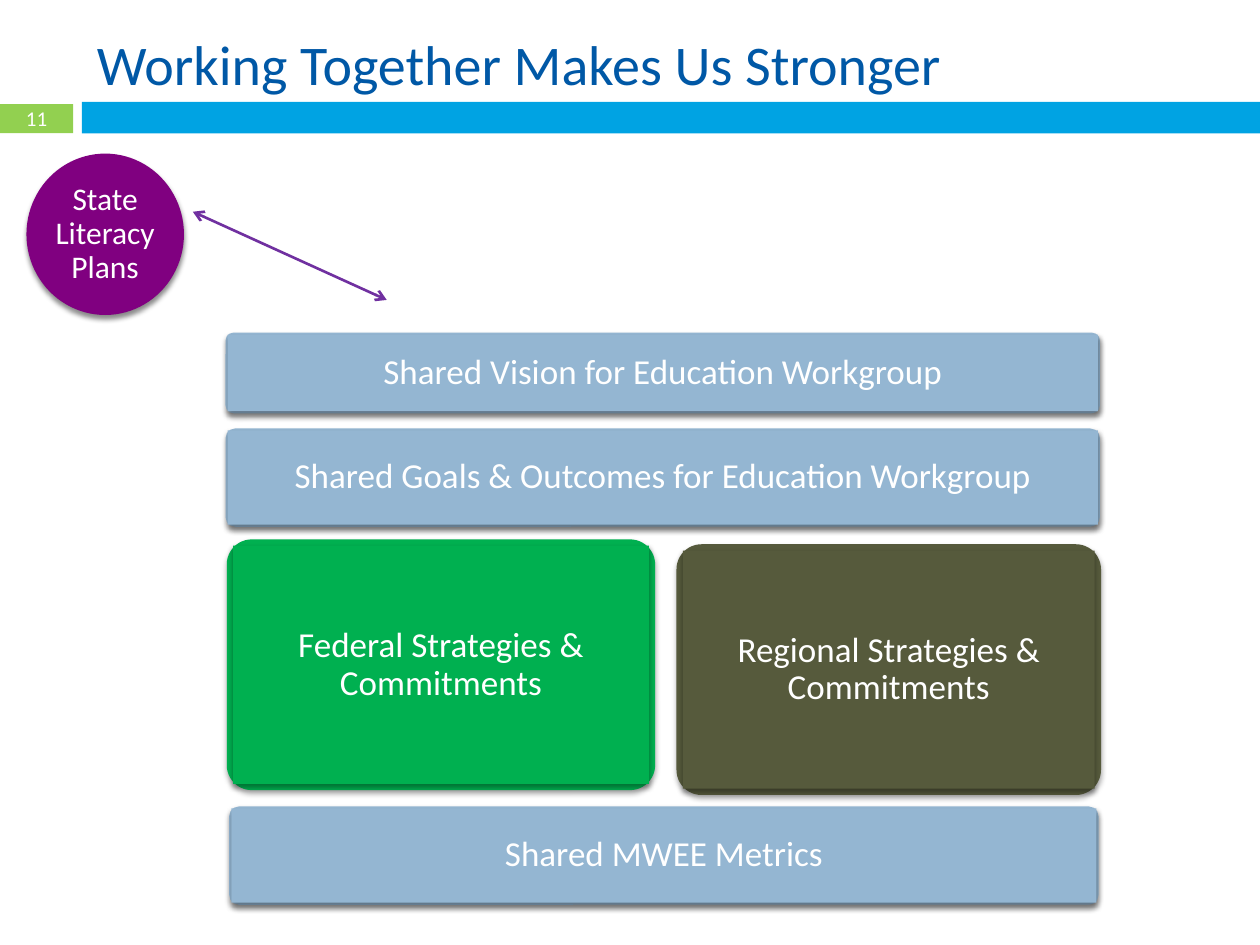
from lxml.etree import SubElement
from pptx import Presentation
from pptx.dml.color import RGBColor
from pptx.enum.shapes import MSO_CONNECTOR as Line, MSO_SHAPE as Shape
from pptx.enum.text import MSO_ANCHOR as Anchor, MSO_AUTO_SIZE as Fit, PP_ALIGN as Align
from pptx.oxml import parse_xml
from pptx.oxml.ns import nsdecls, qn
from pptx.util import Pt

WHITE = RGBColor(0xFF, 0xFF, 0xFF)
NAVY = RGBColor(0x00, 0x58, 0xA6)
SKY = RGBColor(0x00, 0xA3, 0xE3)
LIME = RGBColor(0x92, 0xD0, 0x50)
STEEL = RGBColor(0x94, 0xB6, 0xD2)
GREEN = RGBColor(0x00, 0xB0, 0x50)
OLIVE = RGBColor(0x56, 0x5A, 0x3C)
PURPLE = RGBColor(0x80, 0x00, 0x80)
VIOLET = RGBColor(0x70, 0x30, 0xA0)

TITLE = "Working Together Makes Us Stronger"
PAGE_NUMBER = "11"
PLANS = "State Literacy Plans"
CARDS = [
    ("Shared Vision for Education Workgroup", STEEL, (128.9, 190.1, 499.7, 46.1), 1.2),
    ("Shared Goals & Outcomes for Education Workgroup", STEEL, (128.9, 244.8, 499.7, 56.2), 1.2),
    ("Federal Strategies & Commitments", GREEN, (129.6, 308.2, 244.8, 143.3), 3.6),
    ("Regional Strategies & Commitments", OLIVE, (386.6, 311, 242.6, 143.3), 3.6),
    ("Shared MWEE Metrics", STEEL, (131, 460.8, 496.8, 56.2), 1.2),
]


def add_shadow(shape, opacity, distance):
    shape._element.spPr.append(parse_xml(
        f'<a:effectLst {nsdecls("a")}><a:outerShdw blurRad="{Pt(3)}" dist="{Pt(distance)}" '
        f'dir="5400000" rotWithShape="0"><a:srgbClr val="000000">'
        f'<a:alpha val="{opacity * 1000}"/></a:srgbClr></a:outerShdw></a:effectLst>'))


def add_block(page, kind, place, color, shadow=None):
    shape = page.shapes.add_shape(kind, *map(Pt, place))
    shape.fill.solid()
    shape.fill.fore_color.rgb = color
    shape.line.fill.background()
    if shadow:
        add_shadow(shape, *shadow)
    else:
        shape.shadow.inherit = False
    return shape


def write(shape, text, size, color=WHITE, align=Align.CENTER, margins=None, spacing=None):
    frame = shape.text_frame
    frame.text = text
    frame.word_wrap = True
    frame.auto_size = Fit.NONE
    frame.vertical_anchor = Anchor.MIDDLE
    if margins is not None:
        frame.margin_left = frame.margin_right = Pt(margins)
        frame.margin_top = frame.margin_bottom = Pt(margins)
    para = frame.paragraphs[0]
    para.alignment = align
    para.line_spacing = spacing
    para.font.name = "Calibri"
    para.font.size = Pt(size)
    para.font.color.rgb = color


def add_card(page, text, color, place, inset):
    left, top, width, height = place
    shadow = (35, 2)
    plate = add_block(page, Shape.ROUNDED_RECTANGLE, place, color, shadow)
    plate.adjustments[0] = 0.1
    inner = (left + inset, top + inset, width - 2 * inset, height - 2 * inset)
    panel = add_block(page, Shape.RECTANGLE, inner, color, shadow)
    write(panel, text, 20, margins=1.5, spacing=0.9)


def add_double_arrow(page, start, end):
    arrow = page.shapes.add_connector(Line.STRAIGHT, *map(Pt, start + end))
    arrow.line.color.rgb = VIOLET
    arrow.line.width = Pt(1.5)
    stroke = arrow.line._get_or_add_ln()
    for tag in ("a:headEnd", "a:tailEnd"):
        SubElement(stroke, qn(tag), type="arrow")
    SubElement(arrow._element.spPr, qn("a:effectLst"))


def main():
    """Build the slide on shared education strategies."""
    deck = Presentation()
    deck.slide_width, deck.slide_height = Pt(720), Pt(540)
    page = deck.slides.add_slide(deck.slide_layouts[5])

    title = page.shapes.title
    title.left, title.top, title.width, title.height = map(Pt, (48.2, 18, 642.2, 36))
    write(title, TITLE, 32, NAVY, Align.LEFT)

    number = add_block(page, Shape.RECTANGLE, (0, 59.5, 41.8, 16.6), LIME)
    write(number, PAGE_NUMBER, 12, margins=0)
    add_block(page, Shape.RECTANGLE, (46.8, 58.2, 673.2, 18), SKY)

    plans = add_block(page, Shape.OVAL, (15.1, 87.8, 90, 92.2), PURPLE, (45, 2.4))
    write(plans, PLANS, 18, margins=0.7, spacing=0.9)
    add_double_arrow(page, (110.2, 121), (221, 171.4))

    for card in CARDS:
        add_card(page, *card)
    deck.save("out.pptx")


if __name__ == "__main__":
    main()
